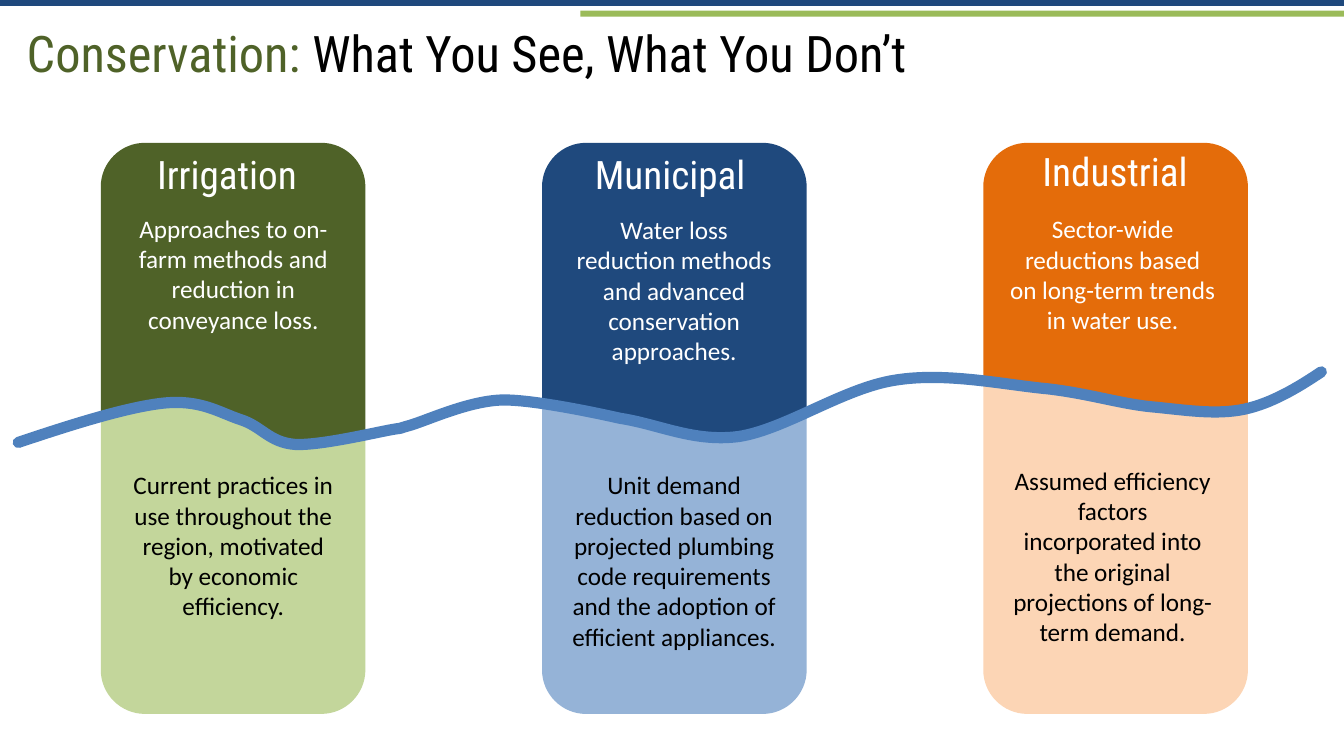
from dataclasses import dataclass

from lxml.etree import SubElement
from pptx import Presentation
from pptx.dml.color import RGBColor
from pptx.enum.shapes import MSO_SHAPE
from pptx.enum.text import MSO_ANCHOR, MSO_AUTO_SIZE, PP_ALIGN
from pptx.oxml.ns import qn
from pptx.shapes.autoshape import Shape
from pptx.slide import Slide
from pptx.util import Cm, Pt

Point = tuple[float, float]
Curve = tuple[Point, Point, Point, Point]
Segment = tuple[Point, ...]  # one point for a line, three for a curve

NAVY = RGBColor(0x1F, 0x49, 0x7D)
LIME = RGBColor(0x9B, 0xBB, 0x59)
DARK_GREEN = RGBColor(0x4F, 0x62, 0x28)
LIGHT_GREEN = RGBColor(0xC3, 0xD6, 0x9B)
LIGHT_BLUE = RGBColor(0x95, 0xB3, 0xD7)
ORANGE = RGBColor(0xE4, 0x6C, 0x0A)
PEACH = RGBColor(0xFC, 0xD5, 0xB5)
WATER = RGBColor(0x4F, 0x81, 0xBD)
WHITE = RGBColor(0xFF, 0xFF, 0xFF)
BLACK = RGBColor(0x00, 0x00, 0x00)

HEADING_FONT = "Roboto Condensed"
BODY_FONT = "Calibri"

# All layout numbers are centimetres.
PAGE_WIDTH, PAGE_HEIGHT = 33.87, 19.05
COLUMN_LEFT, COLUMN_PITCH, COLUMN_WIDTH = 2.54, 11.12, 6.67
COLUMN_TOP, COLUMN_BOTTOM, CORNER_RADIUS = 3.6, 17.99, 1.11
CORNER_HANDLE = 0.45 * CORNER_RADIUS
HEADING_WIDTH, HEADING_HEIGHT = 5.08, 1.45
BODY_WIDTH, BODY_PADDING, LINE_HEIGHT = 5.72, 0.25, 0.77

# Each curve gives two control points and an end point.
WAVE_START: Point = (0.46, 11.15)
WAVE_SEGMENTS: list[Segment] = [
    ((1.83, 10.69), (3.2, 10.26), (4.11, 10.16)),
    ((5.05, 10.06), (5.51, 10.39), (6.05, 10.57)),
    ((6.6, 10.74), (6.78, 11.15), (7.44, 11.2)),
    ((8.08, 11.23), (9.45, 10.9), (9.91, 10.82)),
    ((10.39, 10.74), (9.8, 10.87), (10.26, 10.74)),
    ((10.72, 10.62), (11.76, 10.11), (12.65, 10.08)),
    ((13.54, 10.06), (15.62, 10.54), (15.62, 10.54)),
    ((16.61, 10.69), (17.48, 11.15), (18.62, 11)),
    ((19.79, 10.82), (21.26, 9.78), (22.56, 9.58)),
    ((23.85, 9.37), (25.32, 9.7), (26.42, 9.8)),
    ((27.51, 9.93), (28.27, 10.19), (29.11, 10.26)),
    ((29.92, 10.34), (30.66, 10.46), (31.37, 10.31)),
    ((32.05, 10.16), (32.69, 9.78), (33.3, 9.37)),
]


@dataclass(frozen=True)
class Body:
    text: str
    top: float
    lines: int


@dataclass(frozen=True)
class Column:
    heading: str
    heading_left: float
    heading_top: float
    body_left: float
    visible: Body
    hidden: Body
    dark: RGBColor
    light: RGBColor


COLUMNS = [
    Column("Irrigation", 3.18, 3.66, 3.02,
           Body("Approaches to on-farm methods and reduction in conveyance loss.", 5.25, 4),
           Body("Current practices in use throughout the region, motivated by "
                "economic efficiency.", 11.71, 5),
           DARK_GREEN, LIGHT_GREEN),
    Column("Municipal", 14.35, 3.66, 14.13,
           Body("Water loss reduction methods and advanced conservation approaches.", 5.28, 5),
           Body("Unit demand reduction based on projected plumbing code requirements "
                "and the adoption of efficient appliances.", 11.71, 6),
           NAVY, LIGHT_BLUE),
    Column("Industrial", 25.56, 3.59, 25.18,
           Body("Sector-wide reductions based on long-term trends in water use.", 5.26, 4),
           Body("Assumed efficiency factors incorporated into the original projections "
                "of long-term demand.", 11.6, 6),
           ORANGE, PEACH),
]


def split(curve: Curve, x: float) -> tuple[Curve, Curve]:
    """Divide a curve where it reaches x."""
    def mix(a: Point, b: Point) -> Point:
        return a[0] + (b[0] - a[0]) * t, a[1] + (b[1] - a[1]) * t

    low, high = 0.0, 1.0
    for _ in range(30):
        t = (low + high) / 2
        ab, bc, cd = (mix(a, b) for a, b in zip(curve, curve[1:]))
        abc, bcd = mix(ab, bc), mix(bc, cd)
        middle = mix(abc, bcd)
        low, high = (t, high) if middle[0] < x else (low, t)
    return (curve[0], ab, abc, middle), (middle, bcd, cd, curve[3])


def wave_between(left: float, right: float) -> tuple[Point, list[Segment]]:
    """Start and segments of the wave inside a column."""
    curves: list[Curve] = []
    start = WAVE_START
    for segment in WAVE_SEGMENTS:
        curve = (start, *segment)
        start = segment[-1]
        if curve[3][0] <= left or curve[0][0] >= right:
            continue
        if curve[0][0] < left:
            curve = split(curve, left)[1]
        if curve[3][0] > right:
            curve = split(curve, right)[0]
        curves.append(curve)
    return curves[0][0], [curve[1:] for curve in curves]


def half_outline(left: float, edge: float, inward: int) -> tuple[Point, list[Segment]]:
    """Outline from the wave to a rounded edge; inward is 1 at the top, -1 at the bottom."""
    right = left + COLUMN_WIDTH
    start, segments = wave_between(left, right)
    side = edge + inward * CORNER_RADIUS
    handle = edge + inward * CORNER_HANDLE
    segments += [
        ((right, side),),
        ((right, handle), (right - CORNER_HANDLE, edge), (right - CORNER_RADIUS, edge)),
        ((left + CORNER_RADIUS, edge),),
        ((left + CORNER_HANDLE, edge), (left, handle), (left, side)),
    ]
    return start, segments


def add_outline(page: Slide, start: Point, segments: list[Segment], closed: bool) -> Shape:
    builder = page.shapes.build_freeform(Cm(start[0]), Cm(start[1]), scale=1.0)
    builder.add_line_segments([(Cm(x), Cm(y)) for *_, (x, y) in segments], close=closed)
    shape = builder.convert_to_shape()
    shape.shadow.inherit = False
    lines = list(shape._element.iter(qn("a:lnTo")))
    for line, segment in zip(lines, segments):
        if len(segment) == 3:
            curve = line.getparent().makeelement(qn("a:cubicBezTo"), {})
            for x, y in segment:
                SubElement(curve, qn("a:pt"), x=str(Cm(x) - shape.left), y=str(Cm(y) - shape.top))
            line.getparent().replace(line, curve)
    return shape


def paint(shape: Shape, color: RGBColor) -> None:
    shape.shadow.inherit = False
    shape.fill.solid()
    shape.fill.fore_color.rgb = color
    shape.line.fill.background()


def add_bar(page: Slide, left: float, top: float, color: RGBColor) -> None:
    paint(page.shapes.add_shape(MSO_SHAPE.RECTANGLE, Cm(left), Cm(top),
                                Cm(PAGE_WIDTH - left), Cm(0.15)), color)


def add_text(page: Slide, text: str, left: float, top: float, width: float, height: float,
             font: str, size: int, color: RGBColor) -> None:
    box = page.shapes.add_textbox(Cm(left), Cm(top), Cm(width), Cm(height))
    box.text_frame.word_wrap = True
    box.text_frame.text = text
    para = box.text_frame.paragraphs[0]
    para.alignment = PP_ALIGN.CENTER
    span = para.runs[0]
    span.font.name, span.font.size = font, Pt(size)
    span.font.color.rgb = color


def add_title(page: Slide) -> None:
    title = page.shapes.title
    title.left, title.top, title.width, title.height = Cm(0.42), Cm(0.43), Cm(32.82), Cm(2.34)
    frame = title.text_frame
    frame.auto_size = MSO_AUTO_SIZE.NONE
    frame.vertical_anchor = MSO_ANCHOR.TOP
    para = frame.paragraphs[0]
    para.alignment = PP_ALIGN.LEFT
    for text, color in (("Conservation: ", DARK_GREEN),
                        ("What You See, What You Don’t", BLACK)):
        span = para.add_run()
        span.text = text
        span.font.name, span.font.size = HEADING_FONT, Pt(36)
        span.font.color.rgb = color


def add_wave(page: Slide) -> None:
    wave = add_outline(page, WAVE_START, WAVE_SEGMENTS, closed=False)
    wave.fill.background()
    wave.line.color.rgb = WATER
    wave.line.width = Pt(8)
    wave._element.spPr.find(qn("a:ln")).set("cap", "rnd")


def main() -> None:
    deck = Presentation()
    deck.slide_width, deck.slide_height = Cm(PAGE_WIDTH), Cm(PAGE_HEIGHT)
    page = deck.slides.add_slide(deck.slide_layouts[5])
    add_bar(page, 0, 0, NAVY)
    add_bar(page, 14.63, 0.27, LIME)
    add_title(page)
    for index, column in enumerate(COLUMNS):
        left = COLUMN_LEFT + index * COLUMN_PITCH
        for edge, inward, color in ((COLUMN_TOP, 1, column.dark),
                                    (COLUMN_BOTTOM, -1, column.light)):
            paint(add_outline(page, *half_outline(left, edge, inward), closed=True), color)
    add_wave(page)
    for column in COLUMNS:
        add_text(page, column.heading, column.heading_left, column.heading_top,
                 HEADING_WIDTH, HEADING_HEIGHT, HEADING_FONT, 28, WHITE)
        for body, color in ((column.visible, WHITE), (column.hidden, BLACK)):
            add_text(page, body.text, column.body_left, body.top, BODY_WIDTH,
                     BODY_PADDING + body.lines * LINE_HEIGHT, BODY_FONT, 18, color)
    deck.save("out.pptx")


if __name__ == "__main__":
    main()
